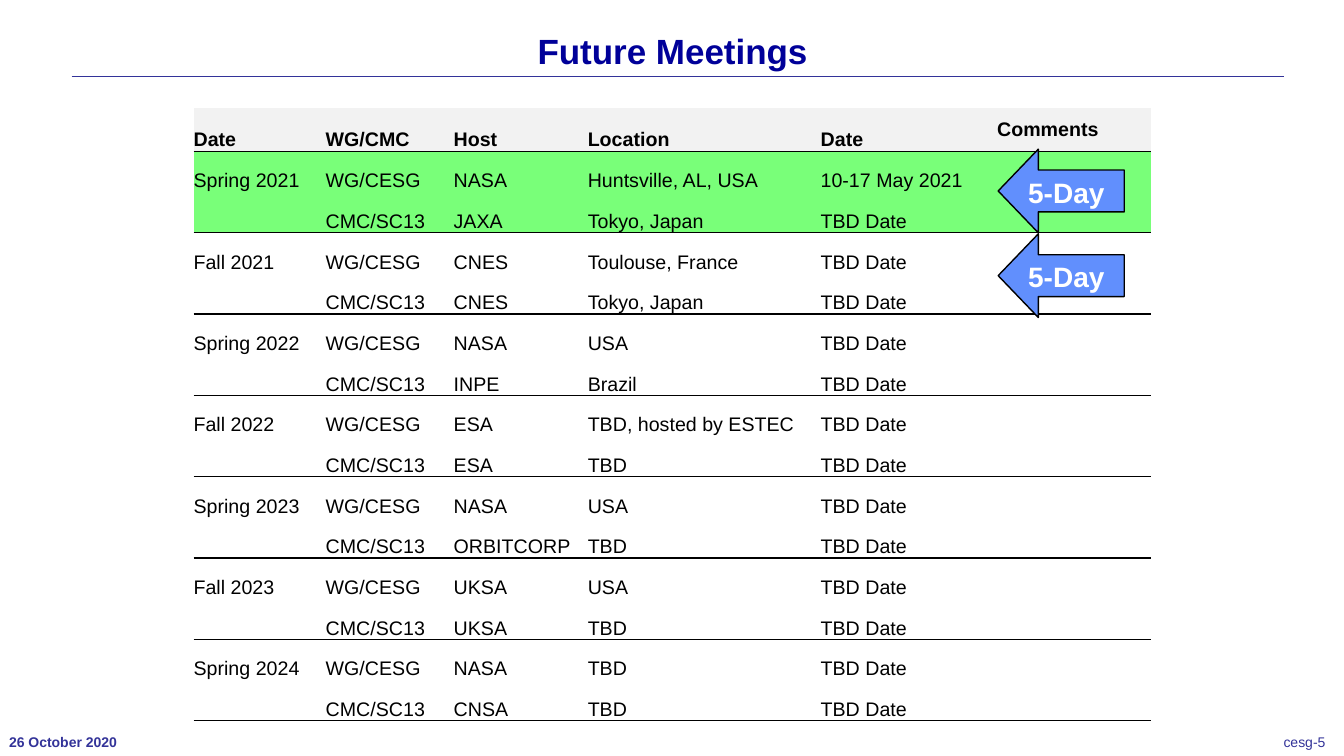
from dataclasses import dataclass

from lxml.etree import SubElement
from pptx import Presentation
from pptx.dml.color import RGBColor
from pptx.enum.shapes import MSO_CONNECTOR, MSO_SHAPE
from pptx.enum.text import MSO_ANCHOR as ANCHOR, PP_ALIGN as ALIGN
from pptx.oxml.ns import qn
from pptx.util import Inches, Pt

BLACK = RGBColor(0x00, 0x00, 0x00)
WHITE = RGBColor(0xFF, 0xFF, 0xFF)
NAVY = RGBColor(0x00, 0x00, 0x99)
INDIGO = RGBColor(0x33, 0x33, 0x99)
GREY = RGBColor(0xF2, 0xF2, 0xF2)
GREEN = RGBColor(0x79, 0xFF, 0x79)
BLUE = RGBColor(0x61, 0x8F, 0xFD)

NO_GRID_STYLE = "{2D5ABB26-0587-4C30-8999-92F81FD0307C}"
HEADERS = ("Date", "WG/CMC", "Host", "Location", "Date", "Comments")
COL_WIDTHS = (1.31, 1.27, 1.33, 2.31, 1.75, 1.53)
TABLE_HEIGHT, HEADER_HEIGHT = 6.08, 0.43
TBD_DATE = "TBD Date"


@dataclass(frozen=True)
class Season:
    """Two meetings of one season: the working groups, then the council."""
    name: str
    wg_host: str
    wg_place: str
    cmc_host: str
    cmc_place: str
    wg_date: str = TBD_DATE

    def rows(self) -> list[tuple[str, ...]]:
        return [(self.name, "WG/CESG", self.wg_host, self.wg_place, self.wg_date, ""),
                ("", "CMC/SC13", self.cmc_host, self.cmc_place, TBD_DATE, "")]


@dataclass(frozen=True)
class Label:
    text: str
    box: tuple[float, float, float, float]
    font: dict
    align: ALIGN = ALIGN.LEFT
    spacing: float = 1.0
    wrap: bool = False


SEASONS = (
    Season("Spring 2021", "NASA", "Huntsville, AL, USA", "JAXA", "Tokyo, Japan",
           "10-17 May 2021"),
    Season("Fall 2021", "CNES", "Toulouse, France", "CNES", "Tokyo, Japan"),
    Season("Spring 2022", "NASA", "USA", "INPE", "Brazil"),
    Season("Fall 2022", "ESA", "TBD, hosted by ESTEC", "ESA", "TBD"),
    Season("Spring 2023", "NASA", "USA", "ORBITCORP", "TBD"),
    Season("Fall 2023", "UKSA", "USA", "UKSA", "TBD"),
    Season("Spring 2024", "NASA", "TBD", "CNSA", "TBD"),
)
LABELS = (
    Label("cesg-5", (12.64, 7.24, 0.69, 0.26), dict(size=Pt(10), color=INDIGO)),
    Label("26 October 2020", (0, 7.24, 1.26, 0.26),
          dict(size=Pt(10), color=INDIGO, bold=True)),
    Label("Future Meetings", (0.67, 0.3, 12, 1.25),
          dict(size=Pt(25), color=NAVY, bold=True), ALIGN.CENTER, 0.9, True),
)
ARROW_TOPS = (1.48, 2.32)


def write(p, text: str, size: Pt, color: RGBColor, bold: bool = False) -> None:
    r = p.add_run()
    r.text = text
    for name, value in dict(name="Arial", size=size, bold=bold).items():
        setattr(r.font, name, value)
    r.font.color.rgb = color


def add_label(slide, label: Label) -> None:
    tf = slide.shapes.add_textbox(*map(Inches, label.box)).text_frame
    insets = dict(margin_left=0.09, margin_right=0.09, margin_top=0.04, margin_bottom=0.04)
    for name, value in insets.items():
        setattr(tf, name, Inches(value))
    tf.word_wrap = label.wrap
    p = tf.paragraphs[0]
    p.alignment, p.line_spacing = label.align, label.spacing
    write(p, label.text, **label.font)


def add_title_rule(slide) -> None:
    line = slide.shapes.add_connector(
        MSO_CONNECTOR.STRAIGHT, *map(Inches, (0.71, 0.75, 12.73, 0.75)))
    line.line.color.rgb = INDIGO
    line.line.width = Pt(0.12)
    SubElement(line._element.spPr, qn("a:effectLst"))


def set_borders(cell, ruled_side: str) -> None:
    """Rule one side in black and clear the others; call before filling the cell."""
    tc_pr = cell._tc.get_or_add_tcPr()
    for side in ("lnL", "lnR", "lnT", "lnB"):
        if side == ruled_side:
            ln = SubElement(tc_pr, qn(f"a:{side}"), w=str(Pt(1)))
            SubElement(SubElement(ln, qn("a:solidFill")), qn("a:srgbClr"), val=str(BLACK))
        else:
            SubElement(SubElement(tc_pr, qn(f"a:{side}"), w="0"), qn("a:noFill"))


def format_cell(cell, text: str, row: int) -> None:
    for side in ("left", "right", "top", "bottom"):
        setattr(cell, f"margin_{side}", 0)
    cell.vertical_anchor = ANCHOR.MIDDLE if text == "Comments" else ANCHOR.BOTTOM
    if text:
        write(cell.text_frame.paragraphs[0], text, Pt(14), BLACK, bold=row == 0)
    set_borders(cell, "lnT" if row % 2 else "lnB")
    if row > 2:
        cell.fill.background()
    else:
        cell.fill.solid()
        cell.fill.fore_color.rgb = GREEN if row else GREY


def add_meetings(slide) -> None:
    rows = [HEADERS] + [row for season in SEASONS for row in season.rows()]
    table = slide.shapes.add_table(
        len(rows), len(HEADERS), *map(Inches, (1.92, 1.07, 9.5, TABLE_HEIGHT))).table
    table.first_row = table.horz_banding = False
    table._tbl.tblPr.find(qn("a:tableStyleId")).text = NO_GRID_STYLE
    for column, width in zip(table.columns, COL_WIDTHS):
        column.width = Inches(width)
    body_height = (TABLE_HEIGHT - HEADER_HEIGHT) / (len(rows) - 1)
    for i, row in enumerate(rows):
        table.rows[i].height = Inches(body_height if i else HEADER_HEIGHT)
        for j, text in enumerate(row):
            format_cell(table.cell(i, j), text, i)


def add_duration_arrow(slide, top: float) -> None:
    sp = slide.shapes.add_shape(
        MSO_SHAPE.LEFT_ARROW, *map(Inches, (9.9, top, 1.25, 0.83)))
    sp.adjustments[1] = 0.48
    sp.shadow.inherit = False
    sp.fill.solid()
    sp.fill.fore_color.rgb = BLUE
    sp.line.color.rgb = BLACK
    sp.line.width = Pt(1)
    tf = sp.text_frame
    tf.vertical_anchor = ANCHOR.TOP
    p = tf.paragraphs[0]
    p.alignment = ALIGN.LEFT
    write(p, "5-Day", Pt(20), WHITE, bold=True)


def main() -> None:
    prs = Presentation()
    prs.slide_width, prs.slide_height = Inches(13.33), Inches(7.5)
    slide = prs.slides.add_slide(prs.slide_layouts[6])
    add_title_rule(slide)
    for label in LABELS:
        add_label(slide, label)
    add_meetings(slide)
    for top in ARROW_TOPS:
        add_duration_arrow(slide, top)
    prs.save("out.pptx")


if __name__ == "__main__":
    main()
